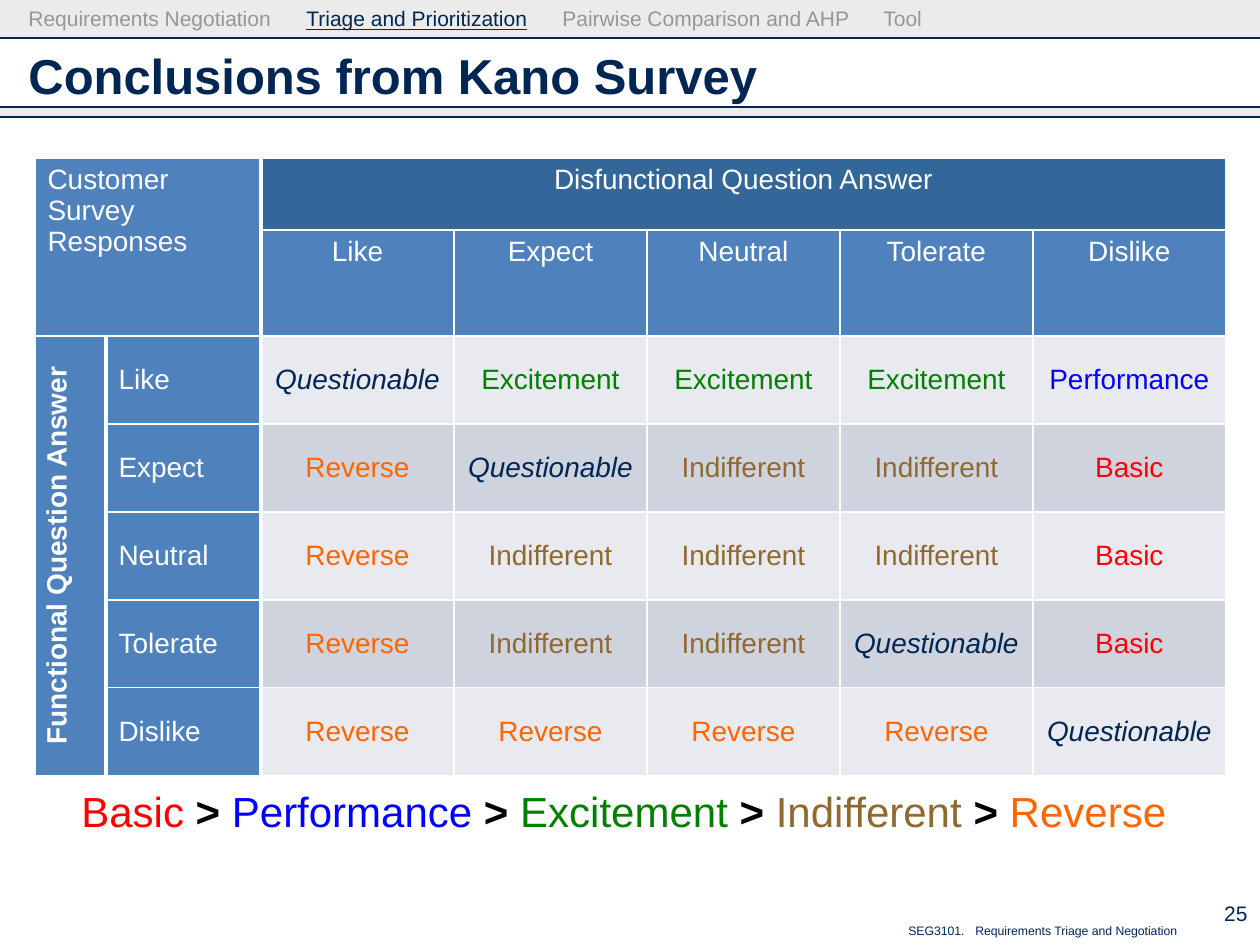
from dataclasses import dataclass
from typing import Any

from lxml import etree
from pptx import Presentation, util as u
from pptx.dml import color
from pptx.enum import shapes, text
from pptx.oxml import ns

PX = 914400 / 126
SLIDE_W, SLIDE_H = 1260, 945


@dataclass(frozen=True)
class Theme:
    font: str = "Arial"
    navy: str = "002654"
    muted: str = "969696"
    band: str = "CDCDCD"
    white: str = "FFFFFF"
    black: str = "000000"
    head: str = "4F81BD"
    head_dark: str = "336699"
    rows: tuple[str, str] = ("E8EAEF", "CED3DE")
    title_pt: int = 28
    ranking_pt: int = 24
    cell_pt: int = 16
    nav_pt: int = 12
    footer_pt: int = 7


T = Theme()
CATEGORY = {
    "Basic": "FF0000",
    "Performance": "0000FF",
    "Excitement": "008000",
    "Indifferent": "906930",
    "Reverse": "FF6600",
    "Questionable": T.navy,
}
ANSWERS = ["Like", "Expect", "Neutral", "Tolerate", "Dislike"]
RESULTS = ["QEEEP", "RQIIB", "RIIIB", "RIIQB", "RRRRQ"]
BY_INITIAL = {name[0]: name for name in CATEGORY}
COL_W = [71, 155] + [193] * 5
ROW_H = [72, 64] + [88] * 5
MID, TOP = text.MSO_ANCHOR.MIDDLE, text.MSO_ANCHOR.TOP
LEFT, CENTER, RIGHT = text.PP_ALIGN.LEFT, text.PP_ALIGN.CENTER, text.PP_ALIGN.RIGHT


@dataclass(frozen=True)
class Run:
    text: str
    color: str = T.navy
    bold: bool = False
    italic: bool = False
    underline: bool = False


@dataclass(frozen=True)
class Label:
    box: tuple[int, int, int, int]
    runs: list[Run]
    size: int
    align: Any = LEFT
    anchor: Any = TOP
    margin_top: int = 6
    tabs: tuple[int, ...] = ()


@dataclass(frozen=True)
class Cell:
    row: int
    col: int
    run: Run
    fill: str
    align: Any = CENTER
    anchor: Any = MID
    span: tuple[int, int] = (1, 1)
    vertical: bool = False


def emu(px: int) -> int:
    return round(px * PX)


def rgb(value: str) -> color.RGBColor:
    return color.RGBColor.from_string(value)


def assign(obj: Any, values: dict[str, Any]) -> None:
    for name, value in values.items():
        setattr(obj, name, value)


def child(parent: Any, tag: str, **attrs: str) -> Any:
    return etree.SubElement(parent, ns.qn(tag), attrs)


def write(p: Any, runs: list[Run], size: int, align: Any) -> None:
    p.alignment = align
    for item in runs:
        r = p.add_run()
        r.text = item.text
        assign(r.font, {"name": T.font, "size": u.Pt(size), "bold": item.bold,
                        "italic": item.italic, "underline": item.underline})
        r.font.color.rgb = rgb(item.color)


def add_label(s: Any, label: Label) -> None:
    tf = s.shapes.add_textbox(*map(emu, label.box)).text_frame
    assign(tf, {"word_wrap": True, "vertical_anchor": label.anchor,
                "margin_top": emu(label.margin_top)})
    p = tf.paragraphs[0]
    if label.tabs:
        stops = child(p._p.get_or_add_pPr(), "a:tabLst")
        for pos in label.tabs:
            child(stops, "a:tab", pos=str(emu(pos)), algn="l")
    write(p, label.runs, label.size, label.align)


def add_band(s: Any, top: int, height: int) -> None:
    sp = s.shapes.add_shape(shapes.MSO_SHAPE.RECTANGLE,
                            *map(emu, (0, top, SLIDE_W, height)))
    sp.shadow.inherit = False
    sp.line.fill.background()
    sp.fill.solid()
    sp.fill.fore_color.rgb = rgb(T.band)
    child(sp._element.spPr.find(ns.qn("a:solidFill"))[0], "a:alpha", val="40000")


def add_rule(s: Any, y: int) -> None:
    line = s.shapes.add_connector(shapes.MSO_CONNECTOR.STRAIGHT,
                                  *map(emu, (0, y, SLIDE_W, y)))
    line.line.color.rgb = rgb(T.navy)
    line.line.width = u.Pt(0.75)
    child(line._element.spPr, "a:effectLst")


def add_borders(tc_pr: Any, col: int) -> None:
    widths = {"a:lnL": 3 if col in (1, 2) else 1, "a:lnR": 3 if col in (0, 1) else 1,
              "a:lnT": 1, "a:lnB": 1}
    for tag, width in widths.items():
        ln = child(tc_pr, tag, w=str(u.Pt(width)))
        child(child(ln, "a:solidFill"), "a:srgbClr", val=T.white)


def survey_cells() -> list[Cell]:
    cells = [
        Cell(0, 0, Run("Customer Survey Responses", T.white), T.head, LEFT, TOP, (2, 2)),
        Cell(0, 2, Run("Disfunctional Question Answer", T.white), T.head_dark,
             anchor=TOP, span=(1, 5)),
        Cell(2, 0, Run("Functional Question Answer", T.white, bold=True), T.head,
             anchor=TOP, span=(5, 1), vertical=True),
    ]
    for i, (answer, initials) in enumerate(zip(ANSWERS, RESULTS)):
        run = Run(answer, T.white)
        cells.append(Cell(1, i + 2, run, T.head, anchor=TOP))
        cells.append(Cell(i + 2, 1, run, T.head, LEFT))
        for j, initial in enumerate(initials):
            name = BY_INITIAL[initial]
            result = Run(name, CATEGORY[name], italic=name == "Questionable")
            cells.append(Cell(i + 2, j + 2, result, T.rows[i % 2]))
    return cells


def add_survey(s: Any, left: int, top: int) -> None:
    box = (left, top, sum(COL_W), sum(ROW_H))
    table = s.shapes.add_table(len(ROW_H), len(COL_W), *map(emu, box)).table
    assign(table, {"first_row": False, "horz_banding": False})
    for column, width in zip(table.columns, COL_W):
        column.width = emu(width)
    for row, height in zip(table.rows, ROW_H):
        row.height = emu(height)
    for item in survey_cells():
        cell = table.cell(item.row, item.col)
        rows, cols = item.span
        if rows * cols > 1:
            cell.merge(table.cell(item.row + rows - 1, item.col + cols - 1))
        tc_pr = cell._tc.get_or_add_tcPr()
        add_borders(tc_pr, item.col)
        if item.vertical:
            tc_pr.set("vert", "vert270")
        cell.fill.solid()
        cell.fill.fore_color.rgb = rgb(item.fill)
        cell.vertical_anchor = item.anchor
        write(cell.text_frame.paragraphs[0], [item.run], T.cell_pt, item.align)


def ranking_runs() -> list[Run]:
    runs: list[Run] = []
    for name in list(CATEGORY)[:5]:
        if runs:
            runs.append(Run(" > ", T.black, bold=True))
        runs.append(Run(name, CATEGORY[name]))
    return runs


def main() -> None:
    prs = Presentation()
    assign(prs, {"slide_width": emu(SLIDE_W), "slide_height": emu(SLIDE_H)})
    s = prs.slides.add_slide(prs.slide_layouts[6])
    for top, height in ((0, 38), (107, 9)):
        add_band(s, top, height)
    for y in (107, 38, 117):
        add_rule(s, y)
    add_survey(s, 35, 158)
    nav = [Run("Requirements Negotiation\t", T.muted),
           Run("Triage and Prioritization", underline=True),
           Run("\tPairwise Comparison and AHP\tTool", T.muted)]
    labels = [
        Label((896, 917, 300, 28), [Run("SEG3101.\tRequirements Triage and Negotiation")],
              T.footer_pt, tabs=(67,)),
        Label((16, 33, 1227, 83), [Run("Conclusions from Kano Survey", bold=True)],
              T.title_pt, anchor=MID),
        Label((1172, 892, 88, 43), [Run("25")], T.nav_pt, RIGHT, MID),
        Label((69, 780, 1121, 63), ranking_runs(), T.ranking_pt),
        Label((16, 6, 926, 32), nav, T.nav_pt, margin_top=0, tabs=(278, 534, 855)),
    ]
    for label in labels:
        add_label(s, label)
    prs.save("out.pptx")


if __name__ == "__main__":
    main()
